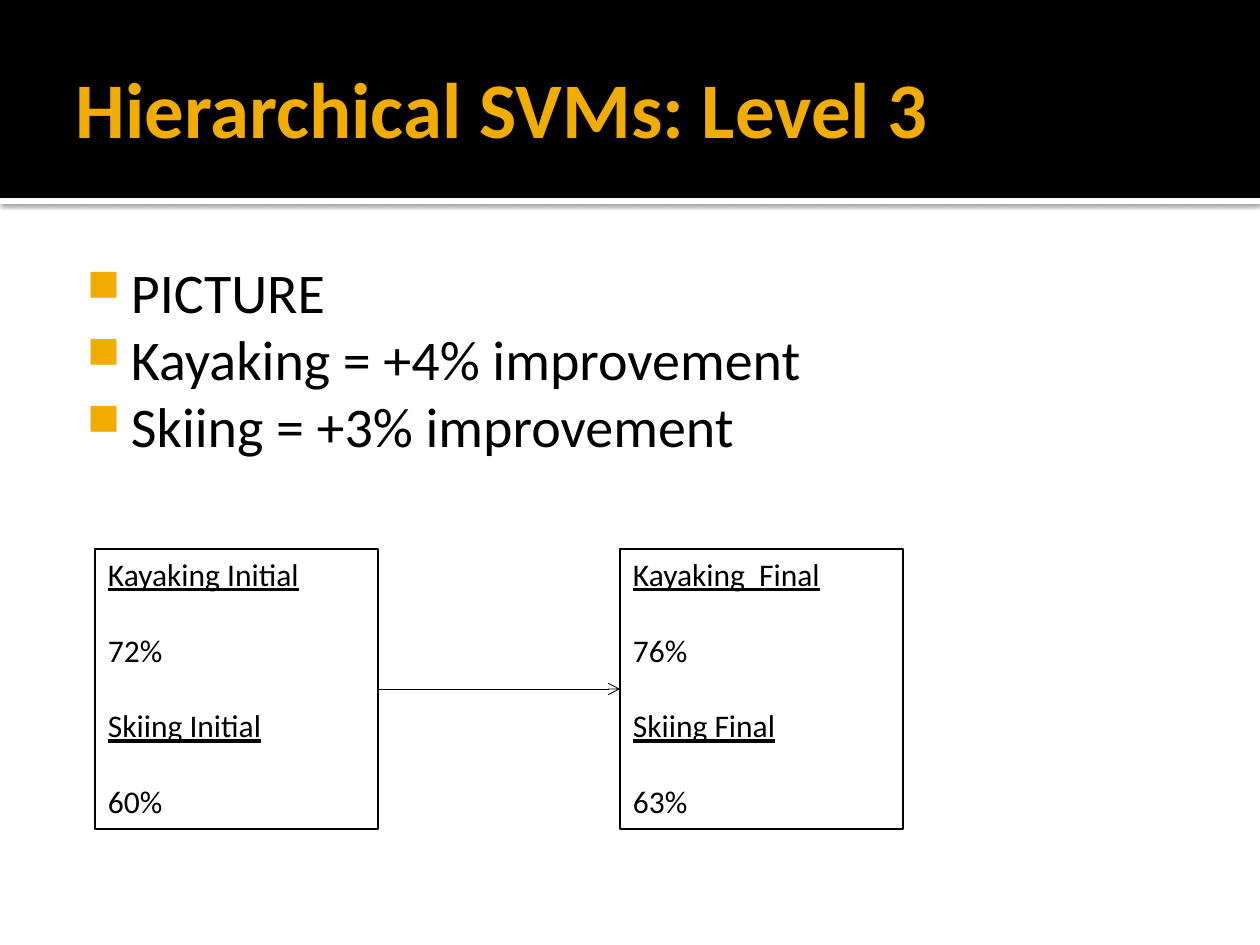
from dataclasses import dataclass

from lxml import etree
from pptx import Presentation
from pptx import util as u
from pptx.dml.color import RGBColor
from pptx.enum import shapes, text
from pptx.oxml import parse_xml
from pptx.oxml.ns import nsdecls, qn


@dataclass(frozen=True)
class Theme:
    font: str = "Calibri"
    black: RGBColor = RGBColor(0, 0, 0)
    white: RGBColor = RGBColor(255, 255, 255)
    gold: RGBColor = RGBColor(0xF0, 0xAD, 0x00)
    title: int = 45
    body: int = 32
    label: int = 18


T = Theme()
PX = u.Inches(1) / 126


def px(*lengths):
    return [round(n * PX) for n in lengths]


def fill_text(sp, lines, size, color, insets):
    """Write one paragraph per line; insets are left, top, right, bottom in px."""
    tf = sp.text_frame
    tf.word_wrap = True
    tf.margin_left, tf.margin_top, tf.margin_right, tf.margin_bottom = px(*insets)
    for i, line in enumerate(lines):
        p = tf.add_paragraph() if i else tf.paragraphs[0]
        p.text = line
        p.alignment = text.PP_ALIGN.LEFT
        font = p.runs[0].font
        font.name, font.size, font.color.rgb = T.font, u.Pt(size), color
    return tf


prs = Presentation()
prs.slide_width, prs.slide_height = px(1260, 945)
s = prs.slides.add_slide(prs.slide_layouts[6])

# Header band and the shadowed white strip below it
for top, height, color in ((198, 6, T.white), (0, 198, T.black)):
    band = s.shapes.add_shape(shapes.MSO_SHAPE.RECTANGLE, *px(0, top, 1260, height))
    band.shadow.inherit = False
    band.fill.solid()
    band.fill.fore_color.rgb = color
    band.line.fill.background()
    if color == T.white:
        effects = band._element.spPr.find(qn("a:effectLst"))
        effects.append(parse_xml(
            f'<a:outerShdw {nsdecls("a")} blurRad="{u.Pt(2.5)}" dist="{u.Pt(0.8)}" '
            'dir="5400000" rotWithShape="0"><a:srgbClr val="000000">'
            '<a:alpha val="60000"/></a:srgbClr></a:outerShdw>'))

# Title
title = s.shapes.add_textbox(*px(63, 21, 1134, 173))
tf = fill_text(title, ["Hierarchical SVMs: Level 3"], T.title, T.gold, (13, 6, 6, 6))
tf.vertical_anchor = text.MSO_ANCHOR.MIDDLE
tf.paragraphs[0].runs[0].font.bold = True

# Bulleted results
body = s.shapes.add_textbox(*px(63, 244, 1134, 638))
results = ["PICTURE", "Kayaking = +4% improvement", "Skiing = +3% improvement"]
tf = fill_text(body, results, T.body, T.black, (8, 13, 13, 6))
for p in tf.paragraphs:
    pPr = p._p.get_or_add_pPr()
    margin, indent = px(60, -44)
    pPr.set("marL", str(margin))
    pPr.set("indent", str(indent))
    bullet_color = etree.SubElement(pPr, qn("a:buClr"))
    etree.SubElement(bullet_color, qn("a:srgbClr"), val=str(T.gold))
    etree.SubElement(pPr, qn("a:buSzPct"), val="80000")
    etree.SubElement(pPr, qn("a:buChar"), char="■")

# Accuracy boxes: underlined headings alternate with values
BOX_TOP, BOX_W, BOX_H = 549, 283, 280
boxes = []
for left, lines in (
    (95, ["Kayaking Initial", "72%", "Skiing Initial", "60%"]),
    (620, ["Kayaking  Final", "76%", "Skiing Final", "63%"]),
):
    box = s.shapes.add_shape(shapes.MSO_SHAPE.RECTANGLE, *px(left, BOX_TOP, BOX_W, BOX_H))
    box.shadow.inherit = False
    box.fill.background()
    box.line.color.rgb, box.line.width = T.black, u.Pt(0.75)
    tf = fill_text(box, lines, T.label, T.black, (13, 6, 13, 6))
    tf.vertical_anchor = text.MSO_ANCHOR.TOP
    for i, p in enumerate(tf.paragraphs):
        p.runs[0].font.underline = i % 2 == 0
        p.space_before = u.Pt(21.6 if i else 0)
    boxes.append(box)

# Arrow from the initial box to the final box
arrow = s.shapes.add_connector(shapes.MSO_CONNECTOR.STRAIGHT, 0, 0, 0, 0)
arrow.begin_connect(boxes[0], 3)
arrow.end_connect(boxes[1], 1)
arrow.line.color.rgb, arrow.line.width = T.black, u.Pt(0.5)
etree.SubElement(arrow.line._get_or_add_ln(), qn("a:tailEnd"), type="arrow")
etree.SubElement(arrow._element.spPr, qn("a:effectLst"))

prs.save("out.pptx")
